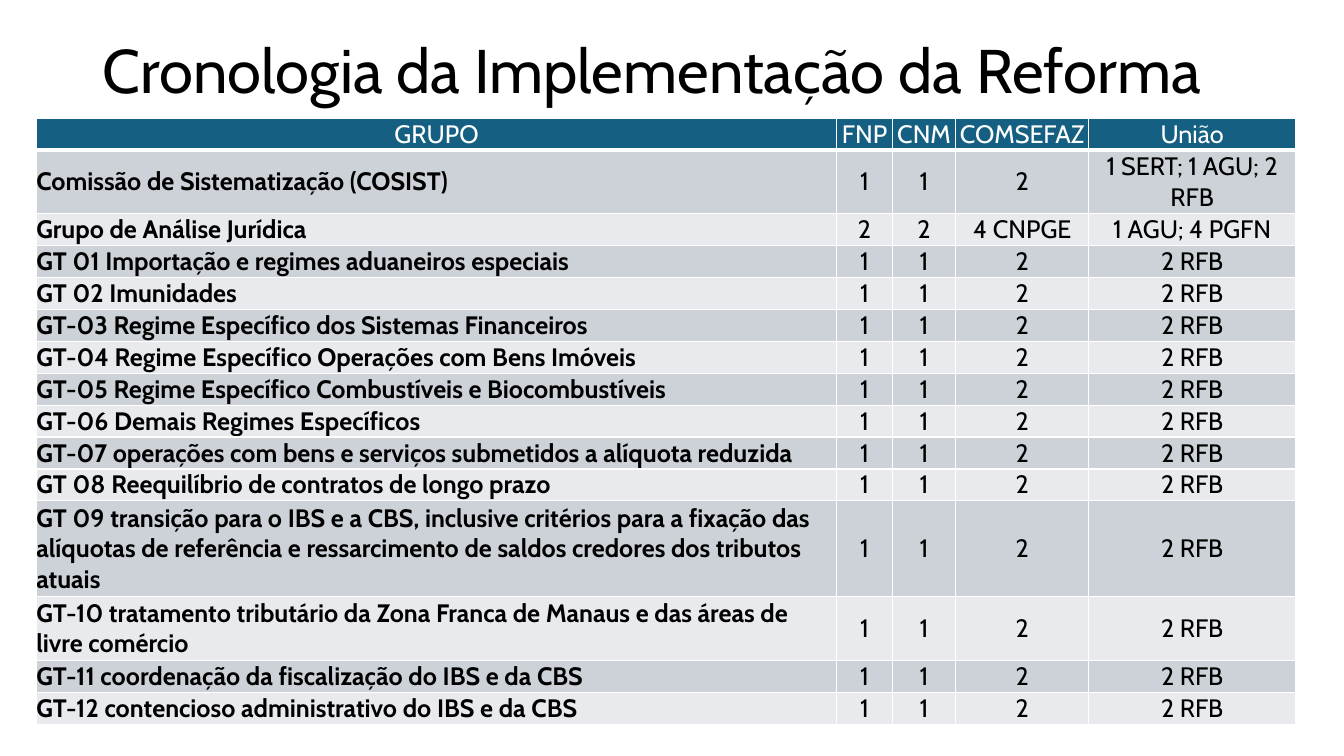
from dataclasses import dataclass

from lxml.etree import SubElement
from pptx import Presentation
from pptx.dml.color import RGBColor
from pptx.enum.text import MSO_ANCHOR as Anchor, PP_ALIGN as Align
from pptx.oxml.ns import qn
from pptx.util import Inches, Pt


@dataclass(frozen=True)
class Theme:
    font: str = "Cabin"
    title_size: int = 44
    table_size: int = 18
    text: str = "000000"
    white: str = "FFFFFF"
    header: str = "156082"
    bands: tuple = ("CCD2D8", "E8EAED")


theme = Theme()


def add_span(para, text, size, color, bold=False):
    span = para.add_run()
    span.text = text
    span.font.name = theme.font
    span.font.size = Pt(size)
    span.font.bold = bold
    span.font.color.rgb = RGBColor.from_string(color)


def add_borders(cell, bottom_width):
    """Draw white lines of 1 pt round the cell, with its own width at the bottom."""
    properties = cell._tc.get_or_add_tcPr()
    for side, width in (("L", 1), ("R", 1), ("T", 1), ("B", bottom_width)):
        line = SubElement(properties, qn(f"a:ln{side}"), w=str(Pt(width)))
        fill = SubElement(line, qn("a:solidFill"))
        SubElement(fill, qn("a:srgbClr"), val=theme.white)


deck = Presentation()
deck.slide_width = Inches(13.33)
deck.slide_height = Inches(7.5)
page = deck.slides.add_slide(deck.slide_layouts[6])

# Title
title = page.shapes.add_textbox(Inches(0.92), Inches(0.29), Inches(11.5), Inches(0.87))
title.text_frame.word_wrap = True
title.text_frame.vertical_anchor = Anchor.MIDDLE
title_para = title.text_frame.paragraphs[0]
title_para.line_spacing = 0.9
add_span(title_para, "Cronologia da Implementação da Reforma", theme.title_size, theme.text)

# Table: each row is a whole number of text lines high
usual_seats = ("1", "1", "2", "2 RFB")
header = ("GRUPO", "FNP", "CNM", "COMSEFAZ", "União")
groups = [
    ("Comissão de Sistematização (COSIST)", 2, ("1", "1", "2", "1 SERT; 1 AGU; 2 RFB")),
    ("Grupo de Análise Jurídica", 1, ("2", "2", "4 CNPGE", "1 AGU; 4 PGFN")),
    ("GT 01 Importação e regimes aduaneiros especiais", 1, usual_seats),
    ("GT 02 Imunidades", 1, usual_seats),
    ("GT-03 Regime Específico dos Sistemas Financeiros", 1, usual_seats),
    ("GT-04 Regime Específico Operações com Bens Imóveis", 1, usual_seats),
    ("GT-05 Regime Específico Combustíveis e Biocombustíveis", 1, usual_seats),
    ("GT-06 Demais Regimes Específicos", 1, usual_seats),
    ("GT-07 operações com bens e serviços submetidos a alíquota reduzida", 1, usual_seats),
    ("GT 08 Reequilíbrio de contratos de longo prazo", 1, usual_seats),
    ("GT 09 transição para o IBS e a CBS, inclusive critérios para a fixação das "
     "alíquotas de referência e ressarcimento de saldos credores dos tributos atuais",
     3, usual_seats),
    ("GT-10 tratamento tributário da Zona Franca de Manaus e das áreas de livre comércio",
     2, usual_seats),
    ("GT-11 coordenação da fiscalização do IBS e da CBS", 1, usual_seats),
    ("GT-12 contencioso administrativo do IBS e da CBS", 1, usual_seats),
]
rows = [header] + [(name, *seats) for name, _, seats in groups]
row_lines = [1] + [lines for _, lines, _ in groups]
column_widths = (7.94, 0.55, 0.63, 1.32, 2.05)
table_height = Inches(6.02)

table = page.shapes.add_table(
    len(rows), len(header), Inches(0.36), Inches(1.17),
    Inches(sum(column_widths)), table_height).table
for column, width in zip(table.columns, column_widths):
    column.width = Inches(width)
for row, lines in zip(table.rows, row_lines):
    row.height = int(table_height * lines / sum(row_lines))

for r, texts in enumerate(rows):
    is_header = r == 0
    for c, text in enumerate(texts):
        is_name = c == 0 and not is_header
        cell = table.cell(r, c)
        cell.margin_left = cell.margin_right = cell.margin_top = cell.margin_bottom = 0
        cell.vertical_anchor = Anchor.BOTTOM if is_header else Anchor.MIDDLE
        add_borders(cell, 3 if is_header else 1)
        cell.fill.solid()
        cell.fill.fore_color.rgb = RGBColor.from_string(
            theme.header if is_header else theme.bands[(r - 1) % 2])
        para = cell.text_frame.paragraphs[0]
        para.alignment = Align.LEFT if is_name else Align.CENTER
        add_span(para, text, theme.table_size,
                 theme.white if is_header else theme.text, is_name)

deck.save("out.pptx")
